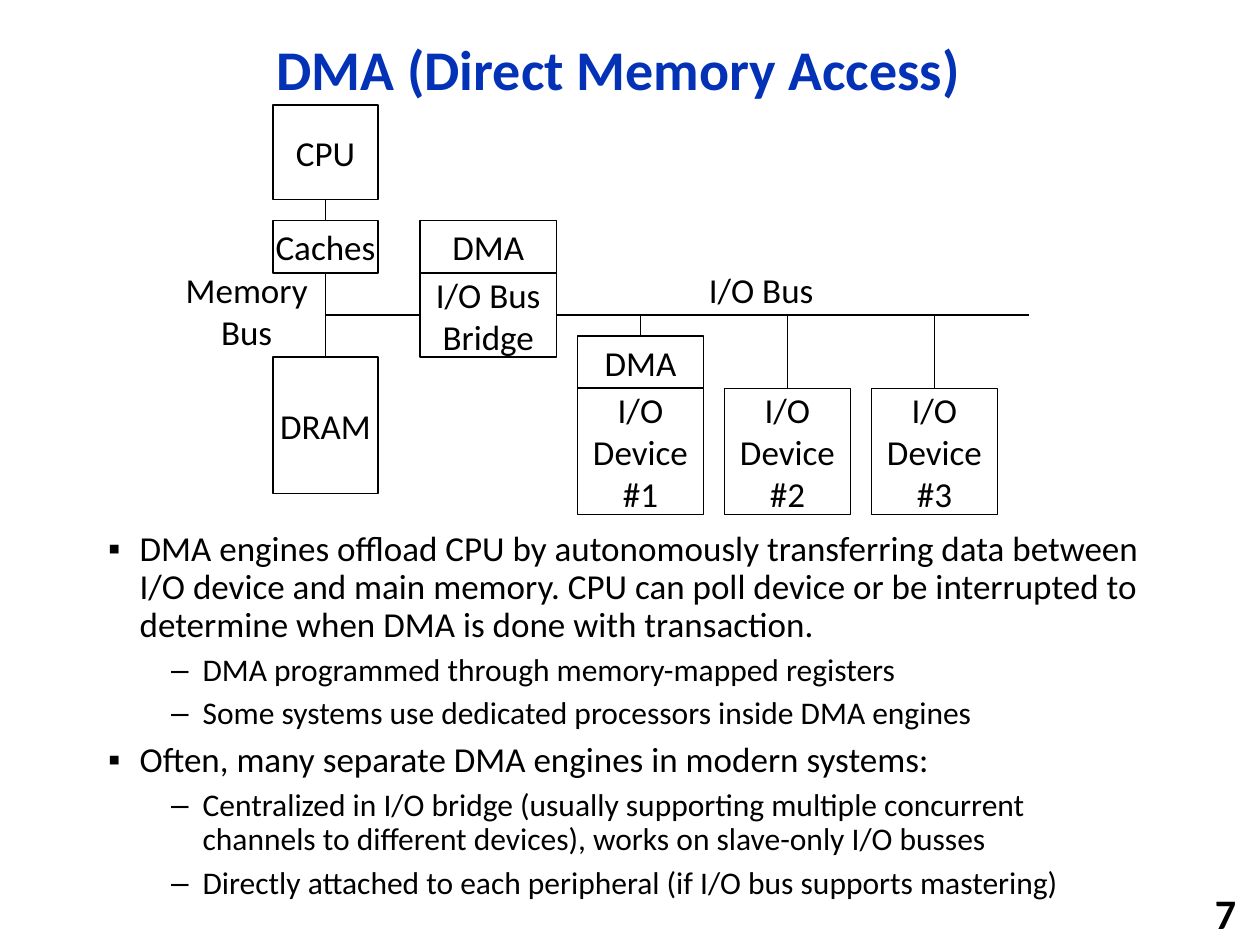
from dataclasses import dataclass

from lxml.etree import SubElement
from pptx import Presentation
from pptx.dml.color import RGBColor
from pptx.enum.shapes import MSO_CONNECTOR, MSO_SHAPE
from pptx.enum.text import MSO_ANCHOR, MSO_AUTO_SIZE, PP_ALIGN
from pptx.oxml.ns import qn
from pptx.slide import Slide
from pptx.text.text import TextFrame
from pptx.util import Inches, Pt

COLORS = {"title": "0332B7", "ink": "000000", "paper": "FFFFFF"}
FONT = "Calibri"
CELL = Inches(1) // 12
BUS_ROW = 30
DEVICE_ROW = 37
DEVICE_COLUMNS = [55 + 14 * index for index in range(3)]


@dataclass(frozen=True)
class Block:
    text: str
    column: float
    row: float
    columns: float
    rows: float

    def place(self) -> tuple[int, ...]:
        return tuple(round(value * CELL) for value in (self.column, self.row, self.columns, self.rows))


@dataclass(frozen=True)
class Wire:
    start: tuple[float, float]
    end: tuple[float, float]


@dataclass(frozen=True)
class Point:
    text: str
    level: int = 0


@dataclass(frozen=True)
class BulletStyle:
    mark: str
    size: int
    margin: float


BLOCKS = [
    Block("CPU", 26, 10, 10, 9),
    Block("Caches", 26, 21, 10, 5),
    Block("DRAM", 26, 34, 10, 13),
    Block("I/O Bus Bridge", 40, 26, 13, 8),
    *(Block(f"I/O Device #{number}", column, DEVICE_ROW, 12, 12)
      for number, column in enumerate(DEVICE_COLUMNS, 1)),
    Block("DMA", 40, 21, 13, 5),
    Block("DMA", DEVICE_COLUMNS[0], 32, 12, 5),
]
WIRES = [
    Wire((31, 19), (31, 21)),
    Wire((31, 26), (31, 34)),
    Wire((31, BUS_ROW), (40, BUS_ROW)),
    Wire((53, BUS_ROW), (98, BUS_ROW)),
    *(Wire((column + 6, DEVICE_ROW), (column + 6, BUS_ROW)) for column in DEVICE_COLUMNS),
]
LABELS = [Block("Memory Bus", 15, 25, 17, 9.25), Block("I/O Bus", 64, 25, 17, 5.25)]
TITLE = Block("DMA (Direct Memory Access)", 11, 2, 95.8, 9.75)
BODY = Block("", 9.1, 50, 100.8, 30.4)
PAGE_NUMBER = Block("7", 94, 85, 24.9, 3.8)
BULLETS = [BulletStyle("▪", 20, 0.25), BulletStyle("–", 18, 0.75)]
POINTS = [
    Point("DMA engines offload CPU by autonomously transferring data between I/O device and main memory. "
          "CPU can poll device or be interrupted to determine when DMA is done with transaction."),
    Point("DMA programmed through memory-mapped registers", 1),
    Point("Some systems use dedicated processors inside DMA engines", 1),
    Point("Often, many separate DMA engines in modern systems:"),
    Point("Centralized in I/O bridge (usually supporting multiple concurrent channels to different devices), "
          "works on slave-only I/O busses", 1),
    Point("Directly attached to each peripheral (if I/O bus supports mastering)", 1),
]


def color(name: str) -> RGBColor:
    return RGBColor.from_string(COLORS[name])


def format_text(frame: TextFrame, size: int, align: PP_ALIGN, ink: str = "ink", bold: bool = False) -> None:
    frame.word_wrap = True
    for para in frame.paragraphs:
        para.alignment = align
        for span in para.runs:
            span.font.name, span.font.size, span.font.bold = FONT, Pt(size), bold
            span.font.color.rgb = color(ink)


def draw_wire(page: Slide, wire: Wire) -> None:
    ends = [round(value * CELL) for value in (*wire.start, *wire.end)]
    line = page.shapes.add_connector(MSO_CONNECTOR.STRAIGHT, *ends)
    line.line.color.rgb = color("ink")
    line.line.width = Pt(1)
    SubElement(line._element.spPr, qn("a:effectLst"))


def draw_block(page: Slide, block: Block) -> None:
    box = page.shapes.add_shape(MSO_SHAPE.RECTANGLE, *block.place())
    box.shadow.inherit = False
    box.fill.solid()
    box.fill.fore_color.rgb = color("paper")
    box.line.color.rgb = color("ink")
    box.line.width = Pt(1)
    frame = box.text_frame
    frame.text = block.text
    frame.margin_left = frame.margin_right = frame.margin_top = frame.margin_bottom = 0
    frame.vertical_anchor = MSO_ANCHOR.MIDDLE
    format_text(frame, 20, PP_ALIGN.CENTER)


def draw_label(page: Slide, label: Block, size: int = 20, align: PP_ALIGN = PP_ALIGN.CENTER,
               bold: bool = False, anchor: MSO_ANCHOR = MSO_ANCHOR.TOP) -> None:
    box = page.shapes.add_textbox(*label.place())
    box.text_frame.text = label.text
    box.text_frame.vertical_anchor = anchor
    format_text(box.text_frame, size, align, bold=bold)


def fill_title(page: Slide) -> None:
    box = page.shapes.title
    box.left, box.top, box.width, box.height = TITLE.place()
    frame = box.text_frame
    frame.text = TITLE.text
    frame.auto_size = MSO_AUTO_SIZE.NONE
    frame.vertical_anchor = MSO_ANCHOR.MIDDLE
    frame.paragraphs[0].line_spacing = 0.9
    format_text(frame, 32, PP_ALIGN.CENTER, "title", True)


def fill_body(page: Slide) -> None:
    box = page.placeholders[1]
    box.left, box.top, box.width, box.height = BODY.place()
    frame = box.text_frame
    frame.text = "\n".join(point.text for point in POINTS)
    frame.auto_size = MSO_AUTO_SIZE.NONE
    format_text(frame, 20, PP_ALIGN.LEFT)
    for para, point in zip(frame.paragraphs, POINTS):
        style = BULLETS[point.level]
        para.level = point.level
        para.line_spacing = 0.9
        para.runs[0].font.size = Pt(style.size)
        properties = para._p.get_or_add_pPr()
        properties.set("marL", str(Inches(style.margin)))
        properties.set("indent", str(-Inches(0.25)))
        SubElement(SubElement(properties, qn("a:spcBef")), qn("a:spcPct"), val="30000")
        SubElement(properties, qn("a:buChar"), char=style.mark)


def main() -> None:
    """Build the slide on direct memory access."""
    deck = Presentation()
    deck.slide_width, deck.slide_height = 120 * CELL, 90 * CELL
    page = deck.slides.add_slide(deck.slide_layouts[1])
    fill_title(page)
    fill_body(page)
    draw_label(page, PAGE_NUMBER, 24, PP_ALIGN.RIGHT, True, MSO_ANCHOR.MIDDLE)
    for wire in WIRES:
        draw_wire(page, wire)
    for block in BLOCKS:
        draw_block(page, block)
    for label in LABELS:
        draw_label(page, label)
    deck.save("out.pptx")


if __name__ == "__main__":
    main()
